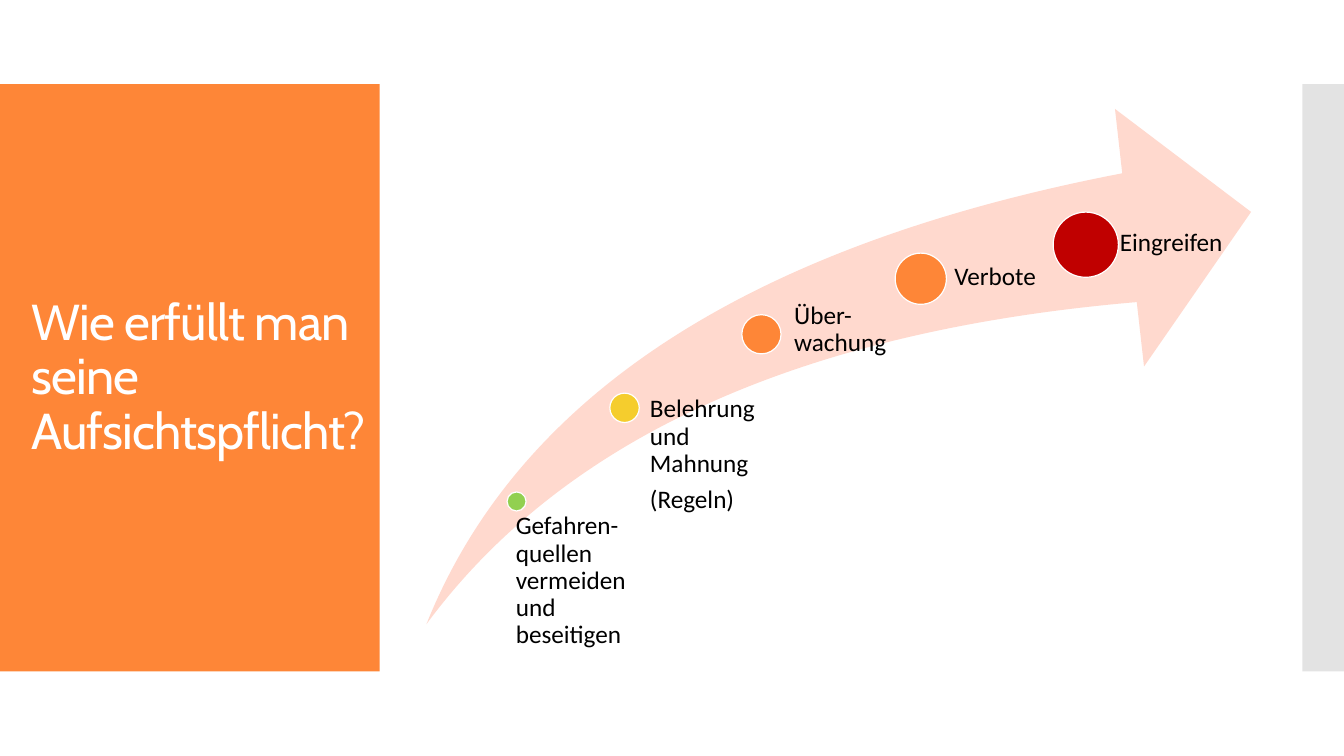
import pptx
import pptx.dml.color
import pptx.enum.shapes
import pptx.enum.text
import pptx.oxml
import pptx.oxml.ns
import pptx.util

Pt = pptx.util.Pt
SHAPES = pptx.enum.shapes.MSO_SHAPE

TITLE_FORMAT = {"name": "Cabin", "size": Pt(36)}
LABEL_FORMAT = {"name": "Calibri", "size": Pt(18)}
LABEL_GAP = 6.3

# Circle: centre x, centre y, diameter, colour
# Label: left, top, width, height, left inset, paragraphs
STEPS = [
    ((369, 358.2, 13.6, "92D050"),
     (361.4, 366.5, 93.6, 87.8, 7.2, ["Gefahren-quellen vermeiden und beseitigen"])),
    ((446.1, 291.3, 21, "F5CD2D"),
     (452.9, 283, 97.9, 154.1, 11.4, ["Belehrung und Mahnung", "(Regeln)"])),
    ((543.9, 238.8, 28, "FE8637"),
     (547.9, 216, 118.1, 247, 19.4, ["Über-wachung"])),
    ((657.7, 199.1, 36.6, "FE8637"),
     (666.7, 188.6, 113.8, 206.6, 14.9, ["Verbote"])),
    ((775.6, 174.8, 46.6, "C00000"),
     (775.4, 164.2, 118.1, 270.7, 24.5, ["Eingreifen"])),
]


def set_color(color_format, value):
    color_format.rgb = pptx.dml.color.RGBColor.from_string(value)


def add_filled_shape(slide, kind, left, top, width, height, fill, line=None):
    shape = slide.shapes.add_shape(kind, Pt(left), Pt(top), Pt(width), Pt(height))
    shape.shadow.inherit = False
    shape.fill.solid()
    set_color(shape.fill.fore_color, fill)
    if line:
        set_color(shape.line.color, line)
        shape.line.width = Pt(0.85)
    else:
        shape.line.fill.background()
    return shape


def set_opacity(shape, percent):
    color = shape.fill._xPr.find(".//" + pptx.oxml.ns.qn("a:srgbClr"))
    namespace = pptx.oxml.ns.nsdecls("a")
    color.append(pptx.oxml.parse_xml(f'<a:alpha {namespace} val="{percent * 1000}"/>'))


def add_text(slide, left, top, width, height, paragraphs, font_format, color,
             frame_format, space_after=0, letter_spacing=None):
    box = slide.shapes.add_textbox(Pt(left), Pt(top), Pt(width), Pt(height))
    frame = box.text_frame
    frame.word_wrap = True
    for name, value in frame_format.items():
        setattr(frame, name, value)
    for index, text in enumerate(paragraphs):
        paragraph = frame.paragraphs[0] if index == 0 else frame.add_paragraph()
        paragraph.line_spacing = 0.9
        paragraph.space_after = Pt(space_after)
        run = paragraph.add_run()
        run.text = text
        for name, value in font_format.items():
            setattr(run.font, name, value)
        set_color(run.font.color, color)
        if letter_spacing is not None:
            run.font._element.set("spc", str(round(letter_spacing * 100)))


def add_step(slide, circle, label):
    center_x, center_y, diameter, color = circle
    add_filled_shape(slide, SHAPES.OVAL, center_x - diameter / 2, center_y - diameter / 2,
                     diameter, diameter, color, line="FFFFFF")
    left, top, width, height, inset, paragraphs = label
    margins = {"margin_left": Pt(inset), "margin_top": 0, "margin_right": 0, "margin_bottom": 0}
    add_text(slide, left, top, width, height, paragraphs, LABEL_FORMAT, "000000",
             margins, space_after=LABEL_GAP)


def main():
    presentation = pptx.Presentation()
    presentation.slide_width = Pt(960)
    presentation.slide_height = Pt(540)
    slide = presentation.slides.add_slide(presentation.slide_layouts[6])

    add_filled_shape(slide, SHAPES.RECTANGLE, 0, 60, 271.2, 419.5, "FE8637")
    side_bar = add_filled_shape(slide, SHAPES.RECTANGLE, 930.2, 60, 29.8, 419.5, "C8C8C8")
    set_opacity(side_bar, 50)

    arrow = add_filled_shape(slide, SHAPES.SWOOSH_ARROW, 304.6, 77.8, 589, 368, "FFD9CE")
    for index in range(2):
        arrow.adjustments[index] = 0.25
    for circle, label in STEPS:
        add_step(slide, circle, label)

    add_text(slide, 15.4, 89.3, 255.6, 362.2, ["Wie erfüllt man seine Aufsichtspflicht?"],
             TITLE_FORMAT, "FFFFFF",
             {"vertical_anchor": pptx.enum.text.MSO_ANCHOR.MIDDLE}, letter_spacing=-0.6)
    presentation.save("out.pptx")


if __name__ == "__main__":
    main()
